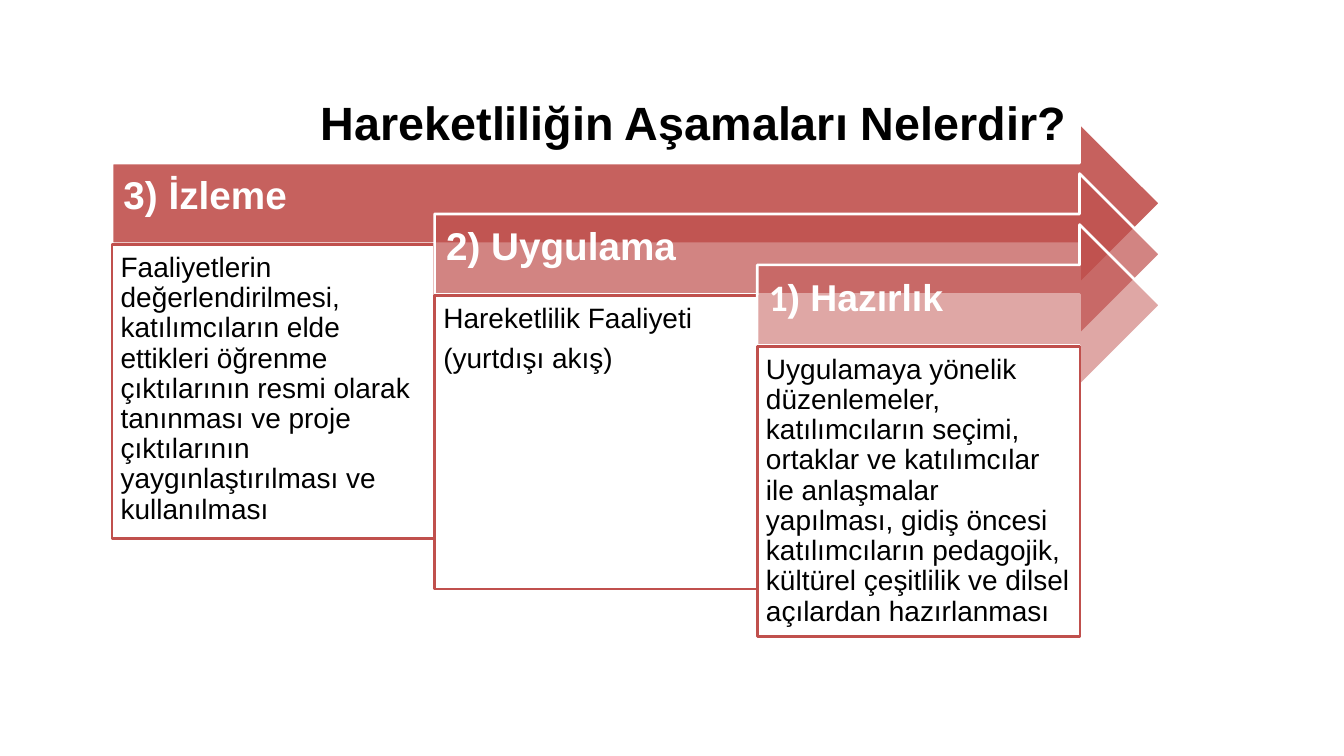
from pptx import Presentation
from pptx.dml import color as dml
from pptx.enum import shapes, text
from pptx.oxml import ns
from pptx import util as u
from lxml import etree

COLORS = {"accent": "C0504D", "white": "FFFFFF", "black": "000000"}


def write(frame, paragraphs, *, size, color, bold=False, align=text.PP_ALIGN.LEFT,
          anchor=text.MSO_ANCHOR.TOP, insets=(7.2, 3.6, 7.2, 3.6), line=None, after=0):
    frame.word_wrap = True
    frame.vertical_anchor = anchor
    (frame.margin_left, frame.margin_top,
     frame.margin_right, frame.margin_bottom) = map(u.Pt, insets)
    for index, runs in enumerate(paragraphs):
        paragraph = frame.add_paragraph() if index else frame.paragraphs[0]
        paragraph.alignment = align
        paragraph.space_after = u.Pt(after)
        if line:
            paragraph.line_spacing = line
        for words, font_name in runs:
            run = paragraph.add_run()
            run.text = words
            run.font.name = font_name
            run.font.size = u.Pt(size)
            run.font.bold = bold
            run.font.color.rgb = dml.RGBColor.from_string(COLORS[color])


class StageSlide:
    """Draws the title, arrows and description boxes of a staged process."""

    def __init__(self, slide, line_width=2):
        self.slide = slide
        self.line_width = line_width

    def title(self, words, left, top, width, height):
        box = self.slide.shapes.add_textbox(*map(u.Pt, (left, top, width, height)))
        write(box.text_frame, [[(words, "Arial")]], size=35, color="black", bold=True,
              align=text.PP_ALIGN.CENTER, anchor=text.MSO_ANCHOR.MIDDLE)

    def panel(self, kind, bounds, fill, line):
        shape = self.slide.shapes.add_shape(kind, *map(u.Pt, bounds))
        shape.shadow.inherit = False
        shape.fill.solid()
        shape.fill.fore_color.rgb = dml.RGBColor.from_string(COLORS[fill])
        shape.line.color.rgb = dml.RGBColor.from_string(COLORS[line])
        shape.line.width = u.Pt(self.line_width)
        return shape

    def arrow(self, runs, bounds, opacity, size):
        shape = self.panel(shapes.MSO_SHAPE.RIGHT_ARROW, bounds, "accent", "white")
        solid = shape.element.spPr.find(ns.qn("a:solidFill"))
        etree.SubElement(solid[0], ns.qn("a:alpha"), val=str(opacity * 1000))
        write(shape.text_frame, [runs], size=size, color="white", bold=True,
              anchor=text.MSO_ANCHOR.MIDDLE, insets=(8.6, 8.6, 20, 18),
              line=0.9, after=size * 0.35)

    def description(self, lines, bounds):
        shape = self.panel(shapes.MSO_SHAPE.RECTANGLE, bounds, "white", "accent")
        write(shape.text_frame, [[(words, "Arial")] for words in lines], size=21,
              color="black", insets=(6.5,) * 4, line=0.9, after=7.35)


STAGES = [
    ([("3) İzleme", "Arial")], 29, 90, 220.3,
     ["Faaliyetlerin değerlendirilmesi, katılımcıların elde ettikleri öğrenme "
      "çıktılarının resmi olarak tanınması ve proje çıktılarının "
      "yaygınlaştırılması ve kullanılması"]),
    ([("2) Uygulama", "Arial")], 29, 70, 220.3,
     ["Hareketlilik Faaliyeti", "(yurtdışı akış)"]),
    ([("1", "Calibri"), (") Hazırlık", "Arial")], 28, 50, 217.4,
     ["Uygulamaya yönelik düzenlemeler, katılımcıların seçimi, ortaklar ve "
      "katılımcılar ile anlaşmalar yapılması, gidiş öncesi katılımcıların "
      "pedagojik, kültürel çeşitlilik ve dilsel açılardan hazırlanması"]),
]
LEFT, TOP, RIGHT = 84, 92, 870.2
COLUMN, DROP = 242, 38.2
ARROW_HEIGHT, BOX_OFFSET = 121, 91.4


def main():
    presentation = Presentation()
    presentation.slide_width = u.Pt(1008)
    presentation.slide_height = u.Pt(567)
    slide = presentation.slides.add_slide(presentation.slide_layouts[6])
    stage_slide = StageSlide(slide)
    stage_slide.title("Hareketliliğin Aşamaları Nelerdir?", 49.5, 63, 941.8, 56.9)
    for index, (heading, size, opacity, height, lines) in enumerate(STAGES):
        left, top = LEFT + index * COLUMN, TOP + index * DROP
        stage_slide.arrow(heading, (left, top, RIGHT - left, ARROW_HEIGHT), opacity, size)
        stage_slide.description(lines, (left, top + BOX_OFFSET, COLUMN, height))
    presentation.save("out.pptx")


if __name__ == "__main__":
    main()
